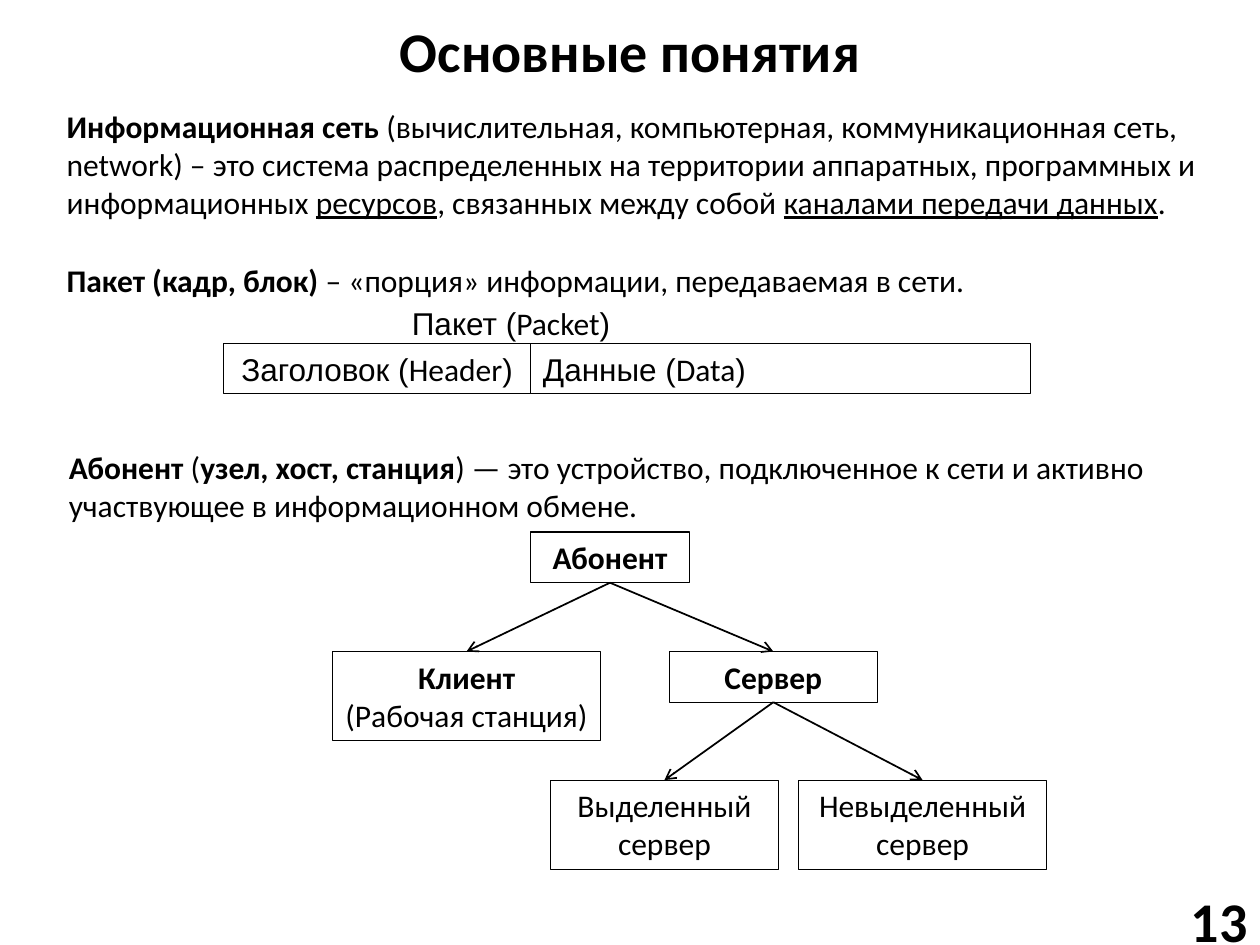
from dataclasses import dataclass

from lxml import etree
from pptx import Presentation
from pptx import util as u
from pptx.dml.color import RGBColor
from pptx.enum import shapes, text
from pptx.oxml.ns import qn

Pt = u.Pt
LEFT, MID, RIGHT = text.PP_ALIGN.LEFT, text.PP_ALIGN.CENTER, text.PP_ALIGN.RIGHT
TOP, CENTER = text.MSO_ANCHOR.TOP, text.MSO_ANCHOR.MIDDLE
FOOT, HEAD = 2, 0


@dataclass(frozen=True)
class Theme:
    ink: RGBColor = RGBColor(0, 0, 0)
    paper: RGBColor = RGBColor(255, 255, 255)
    main: str = "Calibri"
    alt: str = "Arial"
    big: int = 32
    body: int = 18
    edge: float = 0.75
    link: float = 1


def run(words, bold=False, under=False, font=None):
    return dict(words=words, bold=bold, under=under, font=font)


class Deck:
    def __init__(self, theme, wide, high):
        self.theme = theme
        self.show = Presentation()
        self.show.slide_width, self.show.slide_height = Pt(wide), Pt(high)
        self.slide = self.show.slides.add_slide(self.show.slide_layouts[5])

    def label(self, shape, *lines, size=None, align=LEFT, anchor=TOP, inset=(7.2, 3.6)):
        frame = shape.text_frame
        frame.word_wrap = True
        frame.auto_size = text.MSO_AUTO_SIZE.NONE
        frame.vertical_anchor = anchor
        frame.margin_left = frame.margin_right = Pt(inset[0])
        frame.margin_top = frame.margin_bottom = Pt(inset[1])
        for i, line in enumerate(lines):
            para = frame.add_paragraph() if i else frame.paragraphs[0]
            para.alignment = align
            for part in line:
                piece = para.add_run()
                piece.text = part["words"]
                font = piece.font
                font.name = part["font"] or self.theme.main
                font.size = Pt(size or self.theme.body)
                font.bold, font.underline = part["bold"], part["under"]
                font.color.rgb = self.theme.ink
        return shape

    def title(self, words, spot):
        shape = self.slide.shapes.title
        shape.left, shape.top, shape.width, shape.height = map(Pt, spot)
        self.label(shape, [run(words, bold=True)], size=self.theme.big,
                   align=MID, anchor=CENTER)

    def note(self, spot, *lines, **style):
        shape = self.slide.shapes.add_textbox(*map(Pt, spot))
        return self.label(shape, *lines, **style)

    def box(self, spot, *lines, fill=None, align=MID):
        shape = self.slide.shapes.add_shape(shapes.MSO_SHAPE.RECTANGLE, *map(Pt, spot))
        shape.shadow.inherit = False
        if fill is None:
            shape.fill.background()
        else:
            shape.fill.solid()
            shape.fill.fore_color.rgb = fill
        shape.line.color.rgb = self.theme.ink
        shape.line.width = Pt(self.theme.edge)
        return self.label(shape, *lines, align=align)

    def arrow(self, start, end):
        link = self.slide.shapes.add_connector(shapes.MSO_CONNECTOR.STRAIGHT, 0, 0, 0, 0)
        link.begin_connect(start, FOOT)
        link.end_connect(end, HEAD)
        link.line.color.rgb = self.theme.ink
        link.line.width = Pt(self.theme.link)
        props = link.element.spPr
        etree.SubElement(props.find(qn("a:ln")), qn("a:tailEnd"), type="arrow")
        etree.SubElement(props, qn("a:effectLst"))


def pair(local, latin, theme):
    return [run(local + " (", font=theme.alt), run(latin), run(")", font=theme.alt)]


def main():
    theme = Theme()
    deck = Deck(theme, 720, 540)
    deck.title("Основные понятия", (20, 3.6, 680.4, 49.7))

    deck.note((31, 57.6, 663, 72.7), [
        run("Информационная сеть ", bold=True),
        run("(вычислительная, компьютерная, коммуникационная сеть, network) – это система "
            "распределенных на территории аппаратных, программных и информационных "),
        run("ресурсов", under=True),
        run(", связанных между собой "),
        run("каналами передачи данных", under=True),
        run("."),
    ])
    deck.note((31, 145.4, 652, 29), [
        run("Пакет (кадр, блок) ", bold=True),
        run("– «порция» информации, передаваемая в сети."),
    ])
    deck.note((32.2, 252.7, 652, 51), [
        run("Абонент", bold=True),
        run(" ("),
        run("узел, хост, станция", bold=True),
        run(") — это устройство, подключенное к сети и активно участвующее "
            "в информационном обмене."),
    ])

    deck.box((127.8, 196.4, 175.4, 28.6), pair("Заголовок", "Header", theme),
             fill=theme.paper)
    deck.box((303.2, 196.4, 285.6, 28.6), pair("Данные", "Data", theme),
             fill=theme.paper, align=LEFT)
    deck.note((235.4, 173.8, 119, 20), pair("Пакет", "Packet", theme), inset=(0, 0))

    one, two = 29, 51
    rows = 304, 372.3, 445.8
    host = deck.box((303.2, rows[0], 90.8, one), [run("Абонент", bold=True)])
    client = deck.box((190, rows[1], 153.2, two),
                      [run("Клиент", bold=True)], [run("(Рабочая станция)")])
    server = deck.box((382.5, rows[1], 118.8, one), [run("Сервер", bold=True)])
    sole = deck.box((314.6, rows[2], 130.2, two), [run("Выделенный сервер")])
    mixed = deck.box((456.2, rows[2], 142, two), [run("Невыделенный сервер")])
    for start, end in (host, client), (host, server), (server, sole), (server, mixed):
        deck.arrow(start, end)

    deck.note((638, 511.2, 82, 28.8), [run("13", bold=True)],
              size=theme.big, align=RIGHT, anchor=CENTER)
    deck.show.save("out.pptx")


if __name__ == "__main__":
    main()
